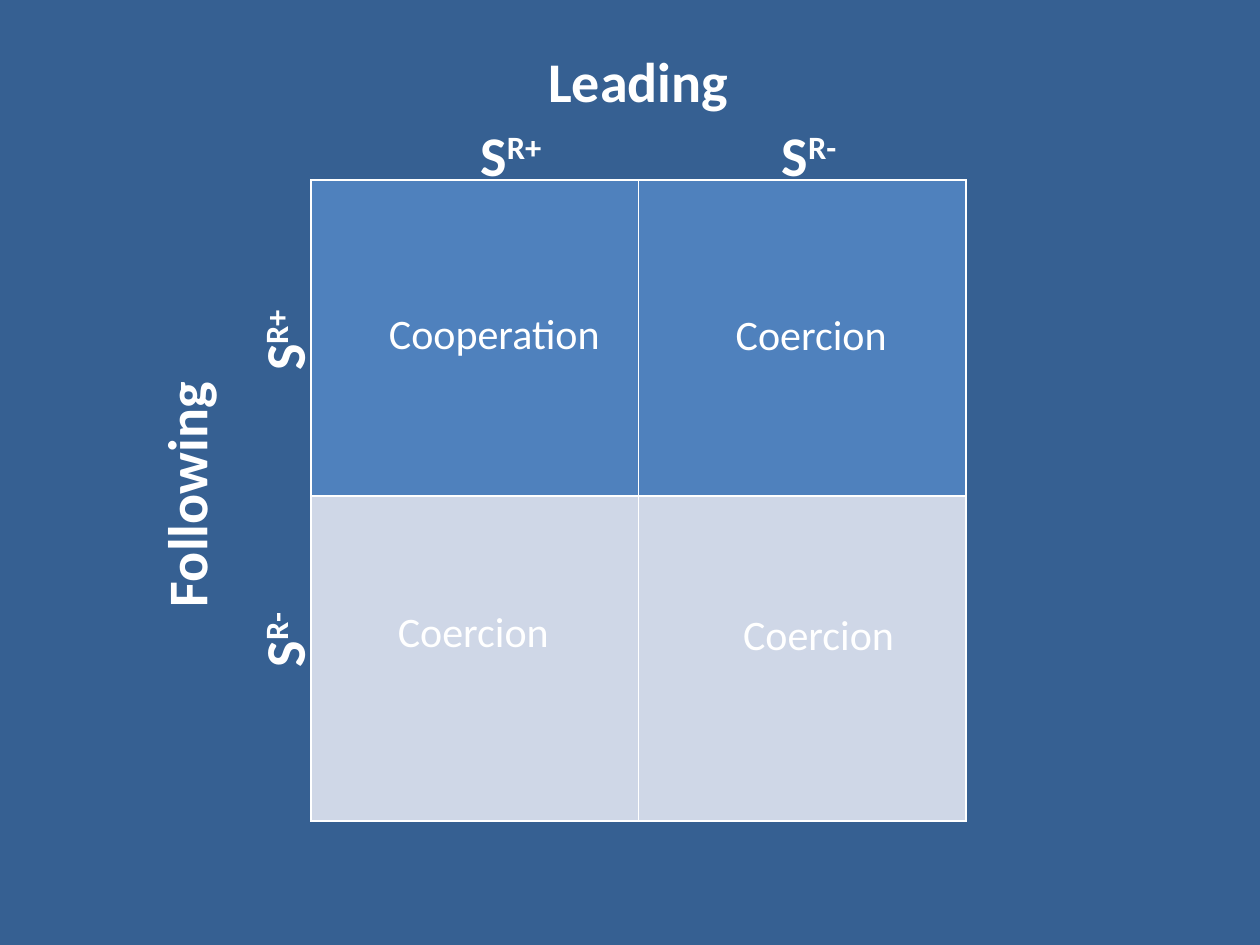
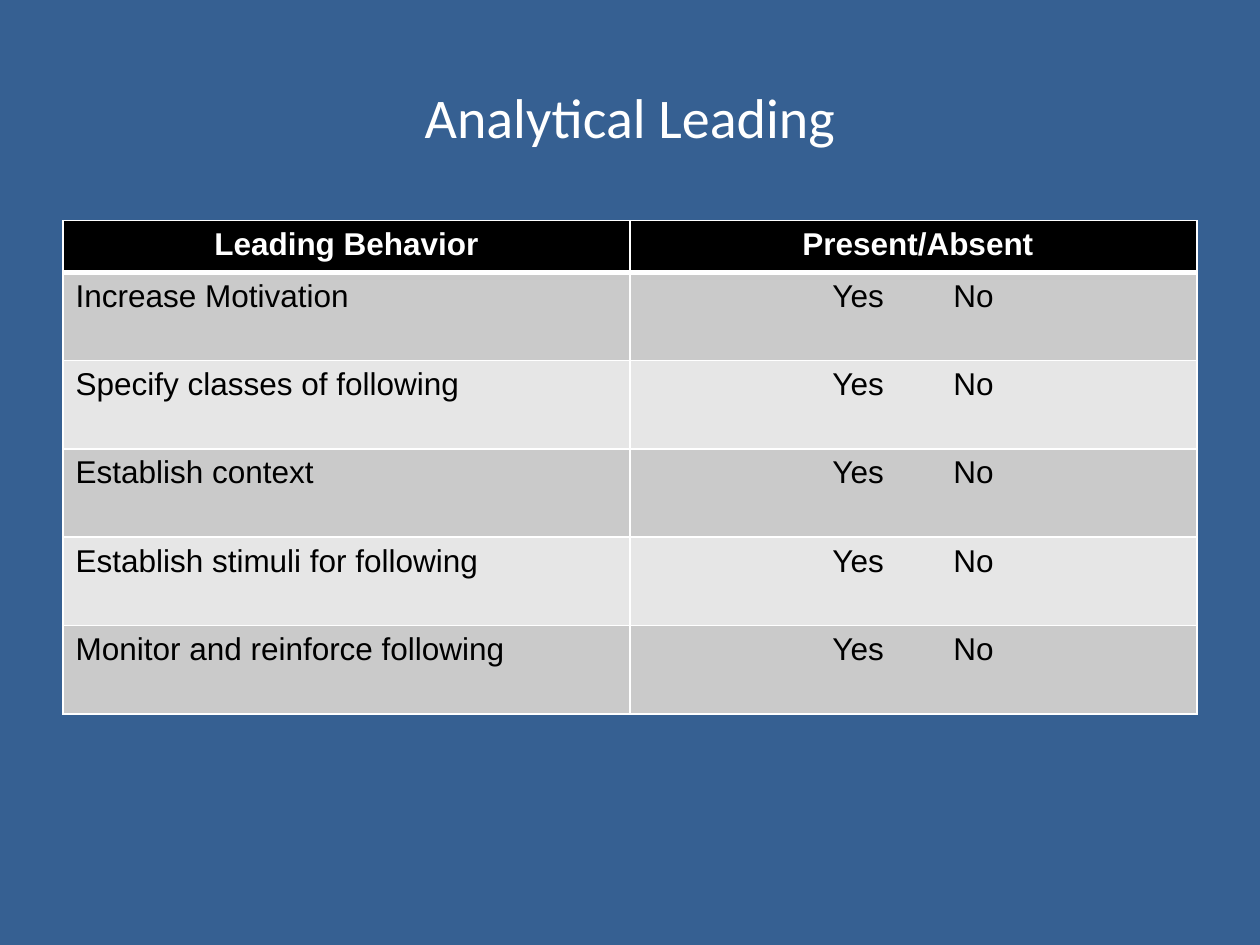
from lxml import etree
from pptx import Presentation
from pptx.dml.color import RGBColor
from pptx.enum.text import MSO_ANCHOR, PP_ALIGN
from pptx.oxml.ns import qn
from pptx.util import Cm, Pt

LEFT, CENTER = PP_ALIGN.LEFT, PP_ALIGN.CENTER
TOP, MIDDLE = MSO_ANCHOR.TOP, MSO_ANCHOR.MIDDLE

COLORS = {
    "background": "366092",
    "white": "FFFFFF",
    "black": "000000",
    "upper": "4F81BD",
    "lower": "CFD7E7",
    "odd": "CACACA",
    "even": "E6E6E6",
}
HEADING_SIZE = 32
LABEL_HEIGHT = 1.63


def rgb(name):
    return RGBColor.from_string(COLORS[name])


def add_slide(presentation):
    slide = presentation.slides.add_slide(presentation.slide_layouts[6])
    slide.background.fill.solid()
    slide.background.fill.fore_color.rgb = rgb("background")
    return slide


def style_paragraph(paragraph, size, color, font="Calibri", bold=False, align=LEFT):
    paragraph.alignment = align
    paragraph.font.size = Pt(size)
    paragraph.font.name = font
    paragraph.font.bold = bold
    paragraph.font.color.rgb = rgb(color)


def add_text(slide, box, text, size, superscript="", bold=False, align=LEFT, anchor=TOP):
    shape = slide.shapes.add_textbox(*map(Cm, box))
    frame = shape.text_frame
    frame.word_wrap = True
    frame.vertical_anchor = anchor
    paragraph = frame.paragraphs[0]
    style_paragraph(paragraph, size, "white", bold=bold, align=align)
    paragraph.add_run().text = text
    if superscript:
        run = paragraph.add_run()
        run.text = superscript
        run.font._element.set("baseline", "30000")
    return shape


def add_axis_label(slide, center, width, text, superscript="", rotation=0):
    x, y = center
    box = (x - width / 2, y - LABEL_HEIGHT / 2, width, LABEL_HEIGHT)
    shape = add_text(slide, box, text, HEADING_SIZE, superscript, bold=True, align=CENTER)
    shape.rotation = rotation


def style_cell(cell, fill, top=1, bottom=1):
    cell.fill.solid()
    cell.fill.fore_color.rgb = rgb(fill)
    properties = cell._tc.get_or_add_tcPr()
    widths = {"a:lnL": 1, "a:lnR": 1, "a:lnT": top, "a:lnB": bottom}
    for index, (tag, width) in enumerate(widths.items()):
        line = etree.Element(qn(tag), w=str(Pt(width)))
        solid = etree.SubElement(line, qn("a:solidFill"))
        etree.SubElement(solid, qn("a:srgbClr"), val=COLORS["white"])
        properties.insert(index, line)


def add_grid(slide, left, top, column_widths, row_heights):
    size = (sum(column_widths), sum(row_heights))
    frame = slide.shapes.add_table(
        len(row_heights), len(column_widths), *map(Cm, (left, top, *size)))
    table = frame.table
    for column, width in zip(table.columns, column_widths):
        column.width = Cm(width)
    for row, height in zip(table.rows, row_heights):
        row.height = Cm(height)
    return table


def add_quadrants(slide, left, top, column_width, row_heights):
    table = add_grid(slide, left, top, [column_width] * 2, row_heights)
    for row, fill in enumerate(("upper", "lower")):
        for column in range(2):
            style_cell(table.cell(row, column), fill)

    add_axis_label(slide, (left + column_width, top - 2), 4.19, "Leading")
    add_axis_label(slide, (left - 2.53, top + sum(row_heights) / 2 - 0.12), 5.1,
                   "Following", rotation=270)
    signs = (("R+", 1.85, 4.03, 3.23), ("R-", 1.72, 10.04, 9.27))
    for sign, width, across, down in signs:
        add_axis_label(slide, (left + across, top - 0.52), width, "S", sign)
        add_axis_label(slide, (left - 0.56, top + down), width, "S", sign, 270)

    outcomes = (
        ("Cooperation", 1.32, 2.44, 5.66),
        ("Coercion", 1.5, 8.46, 3.61),
        ("Coercion", 8.31, 2.46, 3.61),
        ("Coercion", 8.46, 8.51, 3.61),
    )
    for outcome, across, down, width in outcomes:
        add_text(slide, (left + across, top + down, width, 1.3), outcome, 24)


def add_title(slide, text):
    add_text(slide, (1.27, 0.76, 22.86, 3.18), text, HEADING_SIZE,
             align=CENTER, anchor=MIDDLE)


def set_answer(cell):
    cell.margin_left = Cm(4.08)
    paragraph = cell.text_frame.paragraphs[0]
    paragraph.text = "Yes\tNo"
    style_paragraph(paragraph, 18, "black", "Arial")
    tabs = etree.SubElement(paragraph._p.get_or_add_pPr(), qn("a:tabLst"))
    etree.SubElement(tabs, qn("a:tab"), pos=str(Cm(2.44)), algn="l")
    tabs.getparent().insert(0, tabs)


def add_checklist(slide, left, top, width, headers, behaviors):
    heights = [1.04] + [1.78] * len(behaviors)
    table = add_grid(slide, left, top, [width / 2] * 2, heights)
    for column, header in enumerate(headers):
        cell = table.cell(0, column)
        style_cell(cell, "black", bottom=3)
        paragraph = cell.text_frame.paragraphs[0]
        paragraph.text = header
        style_paragraph(paragraph, 18, "white", "Arial", True, CENTER)
    for row, behavior in enumerate(behaviors, 1):
        for column in range(2):
            style_cell(table.cell(row, column), "odd" if row % 2 else "even",
                       top=3 if row == 1 else 1)
        paragraph = table.cell(row, 0).text_frame.paragraphs[0]
        paragraph.text = behavior
        style_paragraph(paragraph, 18, "black", "Arial")
        set_answer(table.cell(row, 1))


def main():
    presentation = Presentation()
    presentation.slide_width = Cm(25.4)
    presentation.slide_height = Cm(19.05)

    add_quadrants(add_slide(presentation), 6.27, 3.63, 6.6, (6.37, 6.55))

    slide = add_slide(presentation)
    add_title(slide, "Analytical Leading")
    add_checklist(
        slide, 1.27, 4.45, 22.86,
        ("Leading Behavior", " Present/Absent"),
        (
            "Increase Motivation",
            "Specify classes of following",
            "Establish context",
            "Establish stimuli for following",
            "Monitor and reinforce following",
        ),
    )
    presentation.save("out.pptx")


if __name__ == "__main__":
    main()
